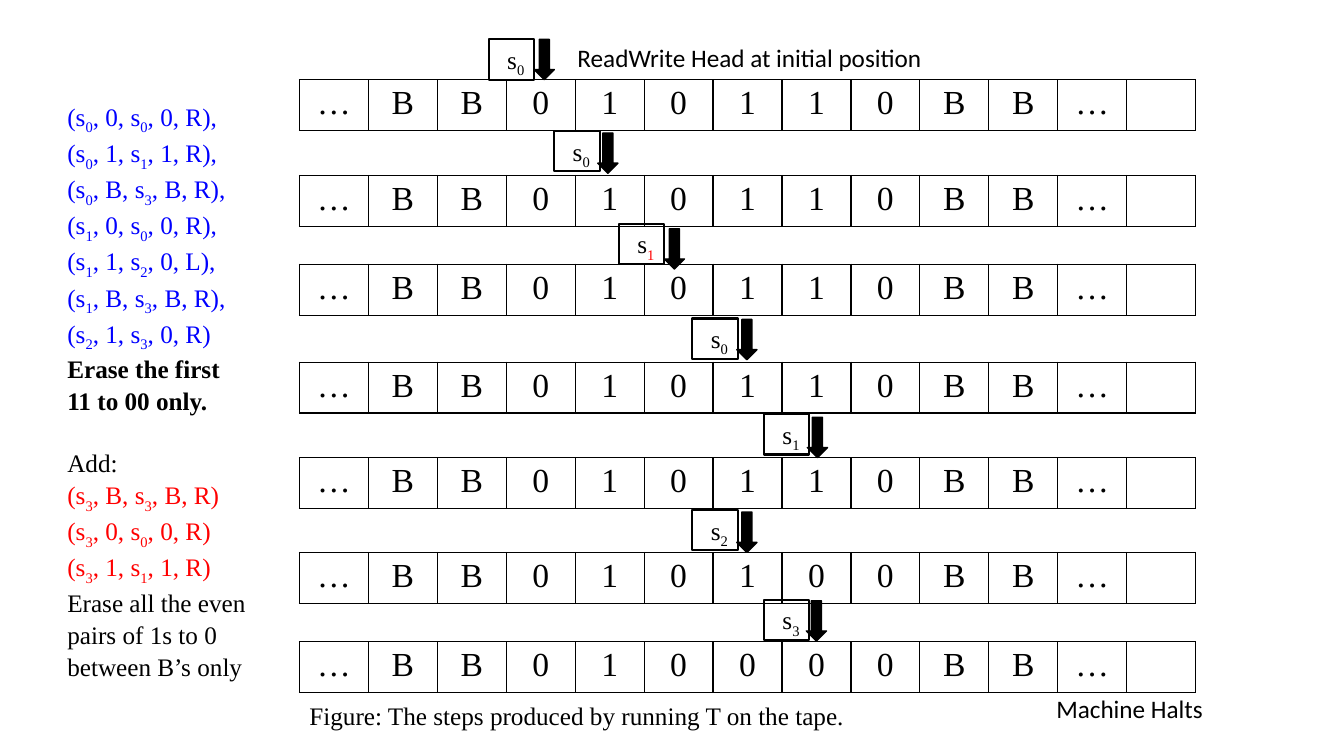
from pptx import Presentation
from pptx.dml.color import RGBColor
from pptx.enum.shapes import MSO_SHAPE as SHAPE
from pptx.enum.text import MSO_ANCHOR as ANCHOR, PP_ALIGN as ALIGN
from pptx.oxml import parse_xml
from pptx.oxml.ns import nsdecls
from pptx.util import Pt

BLACK, WHITE, BLUE, RED = "000000", "FFFFFF", "0000FF", "FF0000"

# tape contents, tape top, state, state box (x, y), arrow (x, y), subscript colour
STEPS = [
    ("…BB010110BB… ", 56.9, "s_0", (349.2, 28.1), (381.6, 28.1), BLACK),
    ("…BB010110BB… ", 125.3, "s_0", (396, 93.6), (427, 95), BLACK),
    ("…BB010110BB… ", 188.8, "s_1", (442.1, 159.8), (474.5, 163.4), RED),
    ("…BB010110BB… ", 258.7, "s_0", (494.6, 227.5), (526.3, 228.2), BLACK),
    ("…BB010110BB… ", 326.9, "s_1", (545.8, 295.9), (576.7, 298.1), BLACK),
    ("…BB010100BB… ", 394.6, "s_2", (494.6, 364.3), (526.3, 365.8), BLACK),
    ("…BB010000BB… ", 458.4, "s_3", (545.8, 428.4), (576, 429.1), BLACK),
]

RULES = [
    "(s_0, 0, s_0, 0, R),", "(s_0, 1, s_1, 1, R),", "(s_0, B, s_3, B, R),",
    "(s_1, 0, s_0, 0, R),", "(s_1, 1, s_2, 0, L),", "(s_1, B, s_3, B, R),",
    "(s_2, 1, s_3, 0, R)",
]
ADDED_RULES = ["(s_3, B, s_3, B, R)", "(s_3, 0, s_0, 0, R)", "(s_3, 1, s_1, 1, R)"]


def rgb(color):
    return RGBColor.from_string(color)


def write(p, text, size=18, font="Times New Roman", color=BLACK, sub_color=None,
          bold=False, align=ALIGN.LEFT):
    """Fill a paragraph; the character after each underscore is a subscript."""
    p.alignment = align

    def add_run(part, part_color, subscript=False):
        if not part:
            return
        r = p.add_run()
        r.text = part
        r.font.size, r.font.name, r.font.bold = Pt(size), font, bold
        r.font.color.rgb = rgb(part_color)
        if subscript:
            r.font._element.set("baseline", "-25000")

    first, *rest = text.split("_")
    add_run(first, color)
    for part in rest:
        add_run(part[0], sub_color or color, subscript=True)
        add_run(part[1:], color)


class TapeSlide:
    col_width, row_height, tape_left = 49.24, 36.3, 213.9

    def __init__(self, prs):
        self.s = prs.slides.add_slide(prs.slide_layouts[6])

    def border(self, cell):
        tcPr = cell._tc.get_or_add_tcPr()
        for side in "LRTB":
            tcPr.append(parse_xml(
                f'<a:ln{side} {nsdecls("a")} w="{Pt(1)}"><a:solidFill>'
                f'<a:srgbClr val="{BLACK}"/></a:solidFill></a:ln{side}>'))

    def tape(self, symbols, top):
        frame = self.s.shapes.add_table(
            1, len(symbols), Pt(self.tape_left), Pt(top),
            Pt(self.col_width * len(symbols)), Pt(self.row_height))
        table = frame.table
        table.first_row = table.horz_banding = False
        for column, cell, symbol in zip(table.columns, table.rows[0].cells, symbols):
            column.width = Pt(self.col_width)
            self.border(cell)
            cell.fill.solid()
            cell.fill.fore_color.rgb = rgb(WHITE)
            if symbol.strip():
                write(cell.text_frame.paragraphs[0], symbol, size=24, align=ALIGN.CENTER)

    def shape(self, kind, x, y, w, h, fill=None, line_width=1):
        sp = self.s.shapes.add_shape(kind, Pt(x), Pt(y), Pt(w), Pt(h))
        sp.shadow.inherit = False
        if fill:
            sp.fill.solid()
            sp.fill.fore_color.rgb = rgb(fill)
        else:
            sp.fill.background()
        sp.line.color.rgb = rgb(BLACK)
        sp.line.width = Pt(line_width)
        return sp

    def arrow(self, x, y):
        self.shape(SHAPE.DOWN_ARROW, x, y, 14.4, 28.8, fill=BLACK)

    def state(self, name, x, y, sub_color):
        tf = self.shape(SHAPE.RECTANGLE, x, y, 32.4, 28.8, line_width=1.5).text_frame
        tf.vertical_anchor = ANCHOR.TOP
        write(tf.paragraphs[0], name, sub_color=sub_color, align=ALIGN.RIGHT)

    def text_box(self, x, y, w, h):
        tf = self.s.shapes.add_textbox(Pt(x), Pt(y), Pt(w), Pt(h)).text_frame
        tf.word_wrap = True
        return tf

    def label(self, text, x, y, w, **style):
        write(self.text_box(x, y, w, 28.8).paragraphs[0], text, **style)

    def rule_list(self, lines, x, y, w, h):
        """Write (text, style, space before) lines in one indented box."""
        tf = self.text_box(x, y, w, h)
        for i, (text, style, gap) in enumerate(lines):
            p = tf.add_paragraph() if i else tf.paragraphs[0]
            p._p.get_or_add_pPr().set("marL", str(Pt(18)))
            p.line_spacing = 1.05
            p.space_before = Pt(gap)
            write(p, text, **style)


def main():
    prs = Presentation()
    prs.slide_width, prs.slide_height = Pt(960), Pt(540)
    slide = TapeSlide(prs)

    for symbols, top, name, box, arrow, sub_color in STEPS:
        slide.tape(symbols, top)
        slide.arrow(*arrow)
        slide.state(name, *box, sub_color)

    slide.label("Machine Halts", 747.4, 491.8, 121.7, font="Calibri")
    slide.label("ReadWrite Head at initial position", 405.4, 26.6, 275, font="Calibri")
    slide.label("Figure: The steps produced by running T on the tape.", 213.9, 496.8, 509.8)

    lines = [(rule, {"color": BLUE}, 0) for rule in RULES]
    lines += [(text, {"bold": True}, 0) for text in ("Erase the first", "11 to 00 only.")]
    lines.append(("Add:", {}, 21.7))
    lines += [(rule, {"color": RED}, 0) for rule in ADDED_RULES]
    lines.append(("Erase all the even pairs of 1s to 0 between B’s only", {}, 0))
    slide.rule_list(lines, 23, 67.7, 173.5, 378)

    prs.save("out.pptx")


if __name__ == "__main__":
    main()
